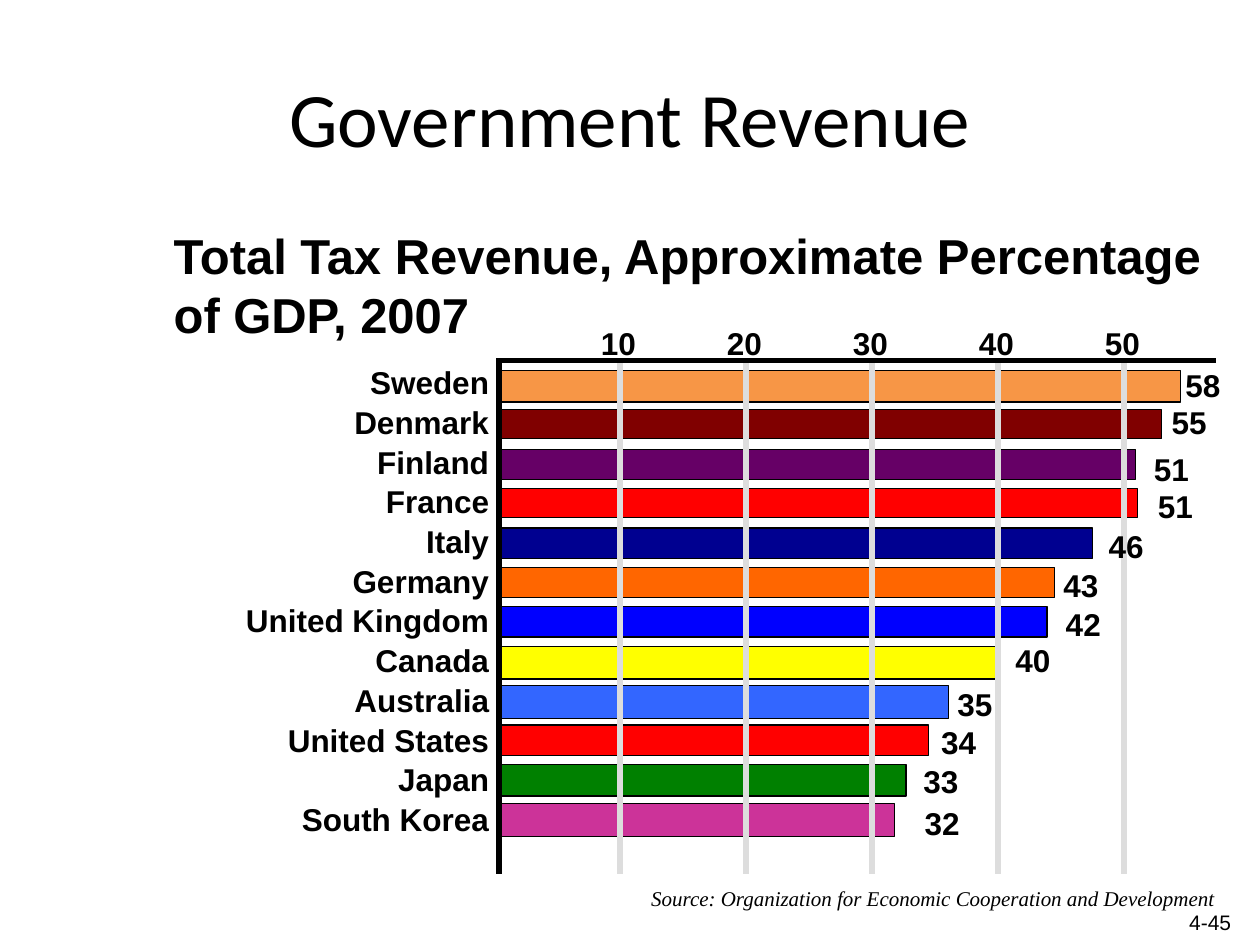
from lxml.etree import SubElement
from pptx import Presentation
from pptx.dml.color import RGBColor
from pptx.enum.shapes import MSO_CONNECTOR, MSO_SHAPE
from pptx.enum.text import MSO_ANCHOR, PP_ALIGN
from pptx.oxml.ns import qn
from pptx.util import Inches, Pt

COLORS = {
    "black": "000000", "grid": "DDDDDD", "apricot": "F79646", "maroon": "800000",
    "purple": "660066", "red": "FF0000", "navy": "000090", "orange": "FF6600",
    "blue": "0000FF", "yellow": "FFFF00", "sky": "3366FF", "green": "008000",
    "pink": "CC3399",
}
# country, value, colour, bar length, bar height, value label left and top
BARS = [
    ("Sweden", 58, "apricot", 5.4, 0.25, 9.31, 2.86),
    ("Denmark", 55, "maroon", 5.25, 0.23, 9.2, 3.15),
    ("Finland", 51, "purple", 5.04, 0.24, 9.06, 3.52),
    ("France", 51, "red", 5.06, 0.23, 9.09, 3.82),
    ("Italy", 46, "navy", 4.7, 0.24, 8.7, 4.13),
    ("Germany", 43, "orange", 4.4, 0.24, 8.34, 4.44),
    ("United Kingdom", 42, "blue", 4.34, 0.24, 8.36, 4.75),
    ("Canada", 40, "yellow", 3.97, 0.26, 7.96, 5.04),
    ("Australia", 35, "sky", 3.56, 0.26, 7.5, 5.39),
    ("United States", 34, "red", 3.4, 0.24, 7.37, 5.69),
    ("Japan", 33, "green", 3.22, 0.25, 7.23, 6.0),
    ("South Korea", 32, "pink", 3.13, 0.26, 7.24, 6.33),
]
TICKS = [10, 20, 30, 40, 50]
BAR_LEFT, BAR_TOP = 3.97, 2.94
ROW_STEP = (6.38 - BAR_TOP) / (len(BARS) - 1)
GRID_LEFT, GRID_STEP = 4.92, 1
AXIS_X, AXIS_Y, AXIS_BOTTOM = 3.96, 2.86, 6.94

BOLD = {"name": "Arial", "size": Pt(18), "bold": True}
HEADING = {**BOLD, "size": Pt(28)}
SOURCE = {"name": "Times New Roman", "size": Pt(12), "italic": True}
NUMBER = {"name": "Arial", "size": Pt(12)}
TITLE = {"name": "Calibri", "size": Pt(44)}


def rgb(key):
    return RGBColor.from_string(COLORS[key])


def format_font(font, values):
    for name, value in values.items():
        setattr(font, name, value)
    font.color.rgb = rgb("black")


def add_text(s, box, lines, font, align=PP_ALIGN.LEFT, spacing=None, wrap=True):
    tf = s.shapes.add_textbox(*map(Inches, box)).text_frame
    tf.word_wrap = wrap
    for i, line in enumerate(lines):
        p = tf.add_paragraph() if i else tf.paragraphs[0]
        p.alignment, p.line_spacing = align, spacing
        r = p.add_run()
        r.text = line
        format_font(r.font, font)
    return tf


def set_tabs(p, count, step):
    tabs = SubElement(p._p.get_or_add_pPr(), qn("a:tabLst"))
    for i in range(1, count + 1):
        SubElement(tabs, qn("a:tab"), pos=str(Inches(i * step)), algn="l")


def add_title(s, text):
    title = s.shapes.title
    title.left, title.top, title.width, title.height = map(Inches, (0.5, 0.3, 9, 1.25))
    tf = title.text_frame
    tf.text = text
    tf.vertical_anchor = MSO_ANCHOR.MIDDLE
    p = tf.paragraphs[0]
    p.alignment = PP_ALIGN.CENTER
    format_font(p.runs[0].font, TITLE)


def add_bar(s, row, color, length, height):
    top = BAR_TOP + row * ROW_STEP
    bar = s.shapes.add_shape(
        MSO_SHAPE.RECTANGLE, *map(Inches, (BAR_LEFT, top, length, height)))
    bar.shadow.inherit = False
    bar.fill.solid()
    bar.fill.fore_color.rgb = rgb(color)
    bar.line.color.rgb = rgb("black")
    bar.line.width = Pt(0.75)


def add_line(s, x1, y1, x2, y2, color):
    line = s.shapes.add_connector(
        MSO_CONNECTOR.STRAIGHT, *map(Inches, (x1, y1, x2, y2)))
    line.line.color.rgb = rgb(color)
    line.line.width = Pt(3)
    SubElement(line._element.spPr, qn("a:effectLst"))


def add_axes(s):
    for i in range(len(TICKS)):
        x = GRID_LEFT + i * GRID_STEP
        add_line(s, x, AXIS_Y, x, AXIS_BOTTOM, "grid")
    add_line(s, AXIS_X, AXIS_Y, AXIS_X, AXIS_BOTTOM, "black")
    add_line(s, 3.94, AXIS_Y, 9.65, AXIS_Y, "black")


def main():
    prs = Presentation()
    prs.slide_width, prs.slide_height = Inches(10), Inches(7.5)
    s = prs.slides.add_slide(prs.slide_layouts[5])
    add_title(s, "Government Revenue")

    add_text(s, (1.56, 2.82, 2.42, 4.23), [bar[0] for bar in BARS], BOLD,
             PP_ALIGN.RIGHT, 1.05)
    ticks = add_text(s, (4.67, 2.52, 5.2, 0.4), ["\t".join(map(str, TICKS))], BOLD)
    set_tabs(ticks.paragraphs[0], len(TICKS) - 1, GRID_STEP)
    add_text(s, (5.07, 6.98, 4.7, 0.3),
             ["Source: Organization for Economic Cooperation and Development"],
             SOURCE, wrap=False)

    for row, (_, _, color, length, height, _, _) in enumerate(BARS):
        add_bar(s, row, color, length, height)
    add_axes(s)
    for _, value, _, _, _, left, top in BARS:
        add_text(s, (left, top, 0.48, 0.4), [str(value)], BOLD, wrap=False)

    add_text(s, (1.28, 1.74, 8.72, 1.04),
             ["Total Tax Revenue, Approximate Percentage of GDP, 2007"], HEADING)
    add_text(s, (7.54, 7.17, 2.33, 0.27), ["4-45"], NUMBER, PP_ALIGN.RIGHT)
    prs.save("out.pptx")


if __name__ == "__main__":
    main()
